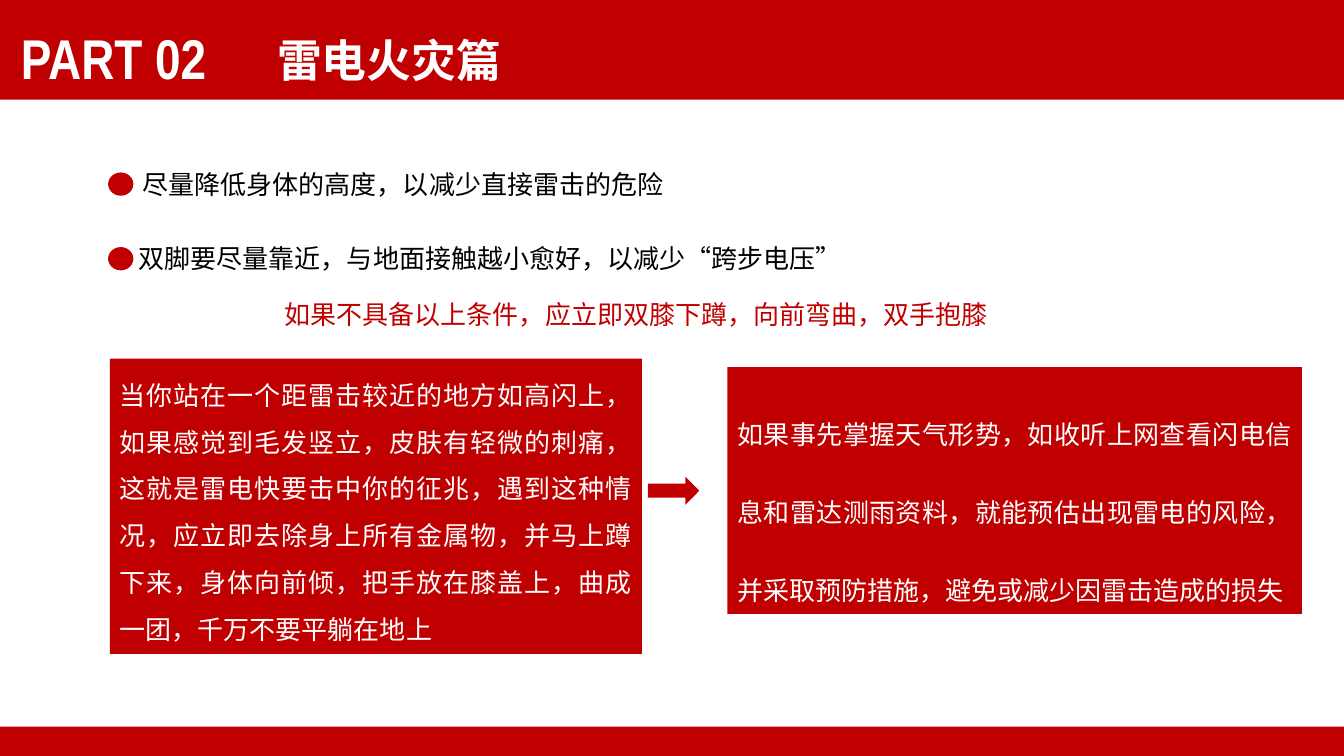
from dataclasses import dataclass

from lxml.etree import SubElement
from pptx import Presentation
from pptx.dml.color import RGBColor
from pptx.enum.shapes import MSO_SHAPE as Shape
from pptx.enum.text import MSO_ANCHOR as Anchor, MSO_AUTO_SIZE as AutoSize, PP_ALIGN as Align
from pptx.oxml.ns import qn
from pptx.util import Cm, Pt


@dataclass(frozen=True)
class Theme:
    red: RGBColor = RGBColor(0xC0, 0x00, 0x00)
    white: RGBColor = RGBColor(0xFF, 0xFF, 0xFF)
    black: RGBColor = RGBColor(0x00, 0x00, 0x00)
    latin: str = "Arial Narrow"
    chinese: str = "Noto Sans CJK JP"
    body: float = 18.6
    title: float = 32
    chapter: float = 40


THEME = Theme()
TIPS = [
    # text, left, top, width
    ("尽量降低身体的高度，以减少直接雷击的危险", 3.35, 4.11, 14.45),
    ("双脚要尽量靠近，与地面接触越小愈好，以减少“跨步电压”", 3.25, 5.99, 19.18),
]
ADVICE = "如果不具备以上条件，应立即双膝下蹲，向前弯曲，双手抱膝"
WARNING = (
    "当你站在一个距雷击较近的地方如高闪上，如果感觉到毛发竖立，皮肤有轻微的刺痛，"
    "这就是雷电快要击中你的征兆，遇到这种情况，应立即去除身上所有金属物，"
    "并马上蹲下来，身体向前倾，把手放在膝盖上，曲成一团，千万不要平躺在地上"
)
FORECAST = (
    "如果事先掌握天气形势，如收听上网查看闪电信息和雷达测雨资料，"
    "就能预估出现雷电的风险，并采取预防措施，避免或减少因雷击造成的损失"
)


def lengths(*values):
    return [Cm(value) for value in values]


def write(box, text, color, size=THEME.body, latin=THEME.latin, bold=False,
          align=Align.JUSTIFY, anchor=Anchor.TOP, spacing=1.0):
    frame = box.text_frame
    frame.word_wrap = True
    frame.auto_size = AutoSize.NONE
    frame.vertical_anchor = anchor
    frame.text = text
    para = frame.paragraphs[0]
    para.alignment = align
    para.line_spacing = spacing
    font = para.font
    font.size, font.bold, font.name = Pt(size), bold, latin
    font.color.rgb = color
    defaults = para._p.pPr.find(qn("a:defRPr"))
    SubElement(defaults, qn("a:ea")).set("typeface", THEME.chinese)


def add_block(page, kind, area, color):
    block = page.shapes.add_shape(kind, *lengths(*area))
    block.shadow.inherit = False
    block.fill.solid()
    block.fill.fore_color.rgb = color
    block.line.fill.background()
    return block


def add_text(page, area, text, color, **style):
    write(page.shapes.add_textbox(*lengths(*area)), text, color, **style)


def add_card(page, area, text, spacing):
    card = add_block(page, Shape.RECTANGLE, area, THEME.red)
    write(card, text, THEME.white, spacing=spacing)


def add_tip(page, text, left, top, width):
    """Add one line of advice with its round marker."""
    add_text(page, (left, top, width, 1.07), text, THEME.black)
    dot = add_block(page, Shape.OVAL, (2.74, top + 0.25, 0.61, 0.56), THEME.red)
    dot.line.color.rgb = THEME.red
    dot.line.width = Pt(0.75)


def add_heading(page):
    heading = dict(bold=True, align=Align.LEFT, anchor=Anchor.MIDDLE)
    title = page.shapes.title
    title.left, title.top, title.width, title.height = lengths(6.73, 0.23, 16.66, 2.54)
    write(title, "雷电火灾篇", THEME.white, size=THEME.title, latin=THEME.chinese, **heading)
    add_text(page, (0.28, 0.41, 10.46, 2.06), "PART 02", THEME.white,
             size=THEME.chapter, **heading)


def main():
    deck = Presentation()
    deck.slide_width, deck.slide_height = lengths(33.88, 19.05)
    page = deck.slides.add_slide(deck.slide_layouts[5])
    page.background.fill.solid()
    page.background.fill.fore_color.rgb = THEME.red

    add_block(page, Shape.RECTANGLE, (0, 2.51, 33.88, 15.8), THEME.white)
    add_heading(page)
    for tip in TIPS:
        add_tip(page, *tip)
    add_text(page, (6.93, 7.39, 21.01, 1.07), ADVICE, THEME.red)
    add_card(page, (2.77, 9.04, 13.41, 7.44), WARNING, 1.5)
    add_block(page, Shape.RIGHT_ARROW, (16.33, 12.01, 1.3, 0.71), THEME.red)
    add_card(page, (18.34, 9.25, 14.48, 6.22), FORECAST, 2.5)
    deck.save("out.pptx")


if __name__ == "__main__":
    main()
